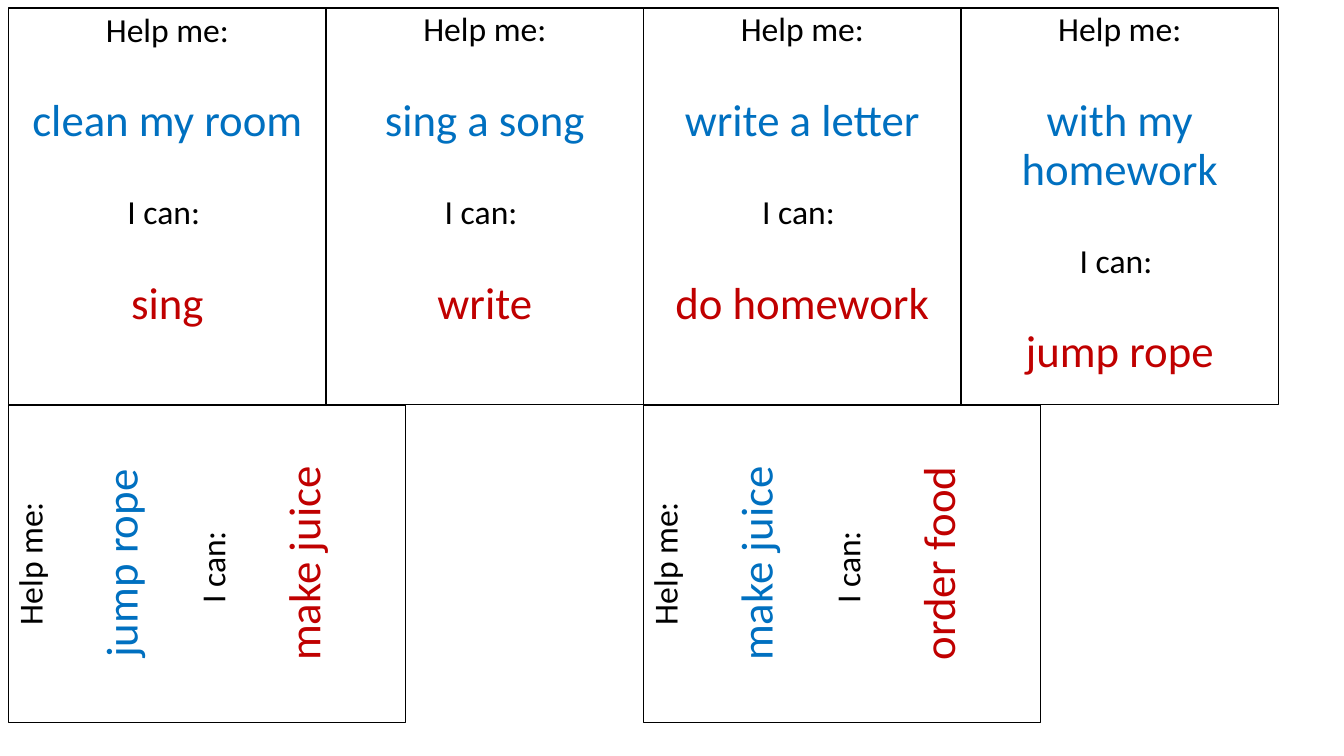
from pptx import Presentation
from pptx.dml.color import RGBColor
from pptx.enum import shapes, text
from pptx.util import Cm, Pt

COLOURS = {"label": "000000", "request": "0070C0", "skill": "C00000",
           "card": "FFFFFF", "border": "000000"}
CARD_WIDTH, CARD_HEIGHT = 8, 10
LEFT, TOP = 0.22, 0.2
UPRIGHT_CARDS = [("clean my room", "sing"), ("sing a song", "write"),
                 ("write a letter", "do homework"),
                 ("with my homework", "jump rope")]
TURNED_CARDS = [("jump rope", "make juice"), ("make juice", "order food")]


def colour(name):
    return RGBColor.from_string(COLOURS[name])


def write_card(frame, request, skill):
    frame.word_wrap = True
    frame.auto_size = text.MSO_AUTO_SIZE.NONE
    frame.vertical_anchor = text.MSO_ANCHOR.TOP
    lines = [("Help me:", 24, "label"), (request, 32, "request"),
             ("I can: ", 24, "label"), (skill, 32, "skill")]
    for index, (words, size, role) in enumerate(lines):
        paragraph = frame.add_paragraph() if index else frame.paragraphs[0]
        paragraph.text = words
        paragraph.alignment = text.PP_ALIGN.CENTER
        paragraph.line_spacing = 0.9
        paragraph.space_before = Pt(35 if index else 0)
        paragraph.font.name = "Calibri"
        paragraph.font.size = Pt(size)
        paragraph.font.color.rgb = colour(role)


def place_card(shape, left, top, request, skill, rotation=0):
    shape.left, shape.top = Cm(left), Cm(top)
    shape.width, shape.height = Cm(CARD_WIDTH), Cm(CARD_HEIGHT)
    shape.rotation = rotation
    shape.fill.solid()
    shape.fill.fore_color.rgb = colour("card")
    shape.line.color.rgb = colour("border")
    shape.line.width = Pt(1)
    write_card(shape.text_frame, request, skill)


def add_card(slide):
    shape = slide.shapes.add_shape(shapes.MSO_SHAPE.RECTANGLE, 0, 0, 0, 0)
    shape.shadow.inherit = False
    return shape


def add_upright_row(slide, left, top):
    for column, (request, skill) in enumerate(UPRIGHT_CARDS):
        shape = add_card(slide) if column else slide.shapes.title
        place_card(shape, left + column * CARD_WIDTH, top, request, skill)


def add_turned_row(slide, left, top):
    shift = (CARD_HEIGHT - CARD_WIDTH) / 2
    for column, (request, skill) in enumerate(TURNED_CARDS):
        place_card(add_card(slide), left + column * 2 * CARD_WIDTH + shift,
                   top - shift, request, skill, 270)


def main():
    presentation = Presentation()
    presentation.slide_width, presentation.slide_height = Cm(33.87), Cm(19.05)
    slide = presentation.slides.add_slide(presentation.slide_layouts[5])
    add_upright_row(slide, LEFT, TOP)
    add_turned_row(slide, LEFT, TOP + CARD_HEIGHT)
    presentation.save("out.pptx")


if __name__ == "__main__":
    main()
